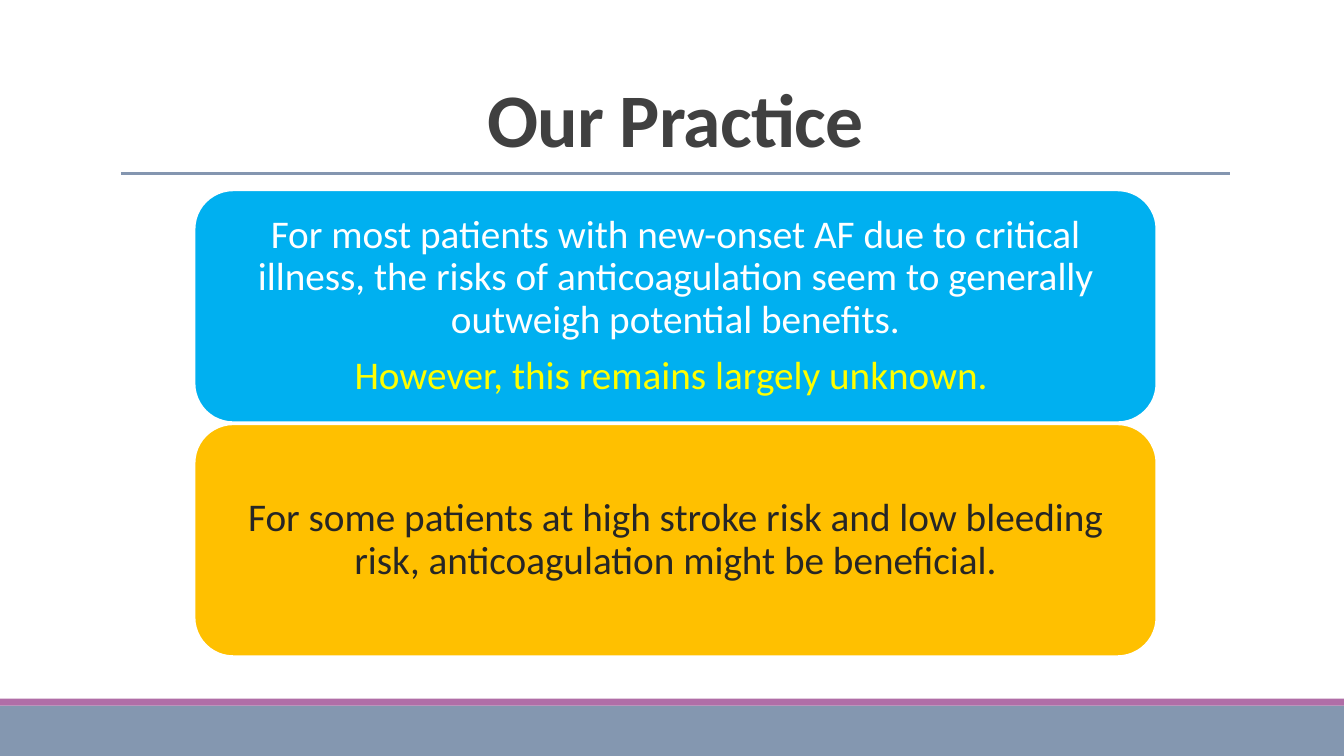
import pptx
import pptx.dml.color
import pptx.enum.shapes
import pptx.enum.text
import pptx.oxml.ns
import pptx.util
from lxml import etree

Pt = pptx.util.Pt
SHAPE = pptx.enum.shapes.MSO_SHAPE
ANCHOR = pptx.enum.text.MSO_ANCHOR
CENTER = pptx.enum.text.PP_ALIGN.CENTER

TITLE = "Our Practice"
# Each card: fill colour, then (text, text colour) paragraphs
CARDS = [
    ("blue", [
        ("For most patients with new-onset AF due to critical illness, the risks of "
         "anticoagulation seem to generally outweigh potential benefits.", "white"),
        ("However, this remains largely unknown. ", "yellow"),
    ]),
    ("amber", [
        ("For some patients at high stroke risk and low bleeding risk, "
         "anticoagulation might be beneficial.", "ink"),
    ]),
]
THEME = {
    "font": "Calibri", "title_size": 54, "body_size": 28,
    "title": "404040", "ink": "262626", "white": "FFFFFF", "yellow": "FFFF00",
    "blue": "00B0F0", "amber": "FFC000",
    "footer": "8497B0", "stripe": "B06EA7", "rule": "8496B0",
}

WIDTH, HEIGHT = 960, 540
FOOTER_H, STRIPE_H = 36, 5
MARGIN, RULE_Y = 86.4, 123.8
CARD_W, CARD_H, CARD_TOP, CARD_GAP = 687, 165.6, 136, 1.5
CARD_INSET = 8.64


def color(name):
    return pptx.dml.color.RGBColor.from_string(THEME[name])


def add_block(slide, kind, x, y, w, h, fill):
    sp = slide.shapes.add_shape(kind, Pt(x), Pt(y), Pt(w), Pt(h))
    sp.shadow.inherit = False
    sp.fill.solid()
    sp.fill.fore_color.rgb = color(fill)
    sp.line.fill.background()
    return sp


def style(p, size, ink, spacing):
    p.alignment = CENTER
    p.line_spacing = spacing
    p.font.name = THEME["font"]
    p.font.size = Pt(THEME[size])
    p.font.color.rgb = color(ink)


def add_title(slide):
    title = slide.shapes.title
    title.left, title.top = Pt(MARGIN), Pt(22.3)
    title.width, title.height = Pt(WIDTH - 2 * MARGIN + 4.8), Pt(98)
    tf = title.text_frame
    tf.auto_size = pptx.enum.text.MSO_AUTO_SIZE.NONE
    tf.vertical_anchor = ANCHOR.BOTTOM
    p = tf.paragraphs[0]
    r = p.add_run()
    r.text = TITLE
    style(p, "title_size", "title", 0.85)
    p.font.bold = True
    r._r.get_or_add_rPr().set("spc", "-50")


def add_rule(slide):
    right = WIDTH - MARGIN + 4.8
    line = slide.shapes.add_connector(
        pptx.enum.shapes.MSO_CONNECTOR.STRAIGHT,
        Pt(MARGIN), Pt(RULE_Y), Pt(right), Pt(RULE_Y))
    line.line.color.rgb = color("rule")
    line.line.width = Pt(2.25)
    etree.SubElement(line._element.spPr, pptx.oxml.ns.qn("a:effectLst"))


def add_card(slide, index, fill, paragraphs):
    top = CARD_TOP + index * (CARD_H + CARD_GAP)
    sp = add_block(slide, SHAPE.ROUNDED_RECTANGLE, 139, top, CARD_W, CARD_H, fill)
    sp.line.color.rgb = color("white")
    sp.line.width = Pt(1.25)
    tf = sp.text_frame
    tf.word_wrap = True
    tf.vertical_anchor = ANCHOR.MIDDLE
    tf.margin_left = tf.margin_right = tf.margin_top = tf.margin_bottom = Pt(CARD_INSET)
    for i, (text, ink) in enumerate(paragraphs):
        p = tf.add_paragraph() if i else tf.paragraphs[0]
        p.text = text
        style(p, "body_size", ink, 0.9)
        p.space_after = Pt(0.35 * THEME["body_size"])


def main():
    prs = pptx.Presentation()
    prs.slide_width, prs.slide_height = Pt(WIDTH), Pt(HEIGHT)
    slide = prs.slides.add_slide(prs.slide_layouts.get_by_name("Title Only"))
    footer_top = HEIGHT - FOOTER_H
    add_block(slide, SHAPE.RECTANGLE, 0, footer_top, WIDTH, FOOTER_H, "footer")
    add_block(slide, SHAPE.RECTANGLE, 0, footer_top - STRIPE_H, WIDTH, STRIPE_H, "stripe")
    add_rule(slide)
    add_title(slide)
    for index, (fill, paragraphs) in enumerate(CARDS):
        add_card(slide, index, fill, paragraphs)
    prs.save("out.pptx")


if __name__ == "__main__":
    main()
